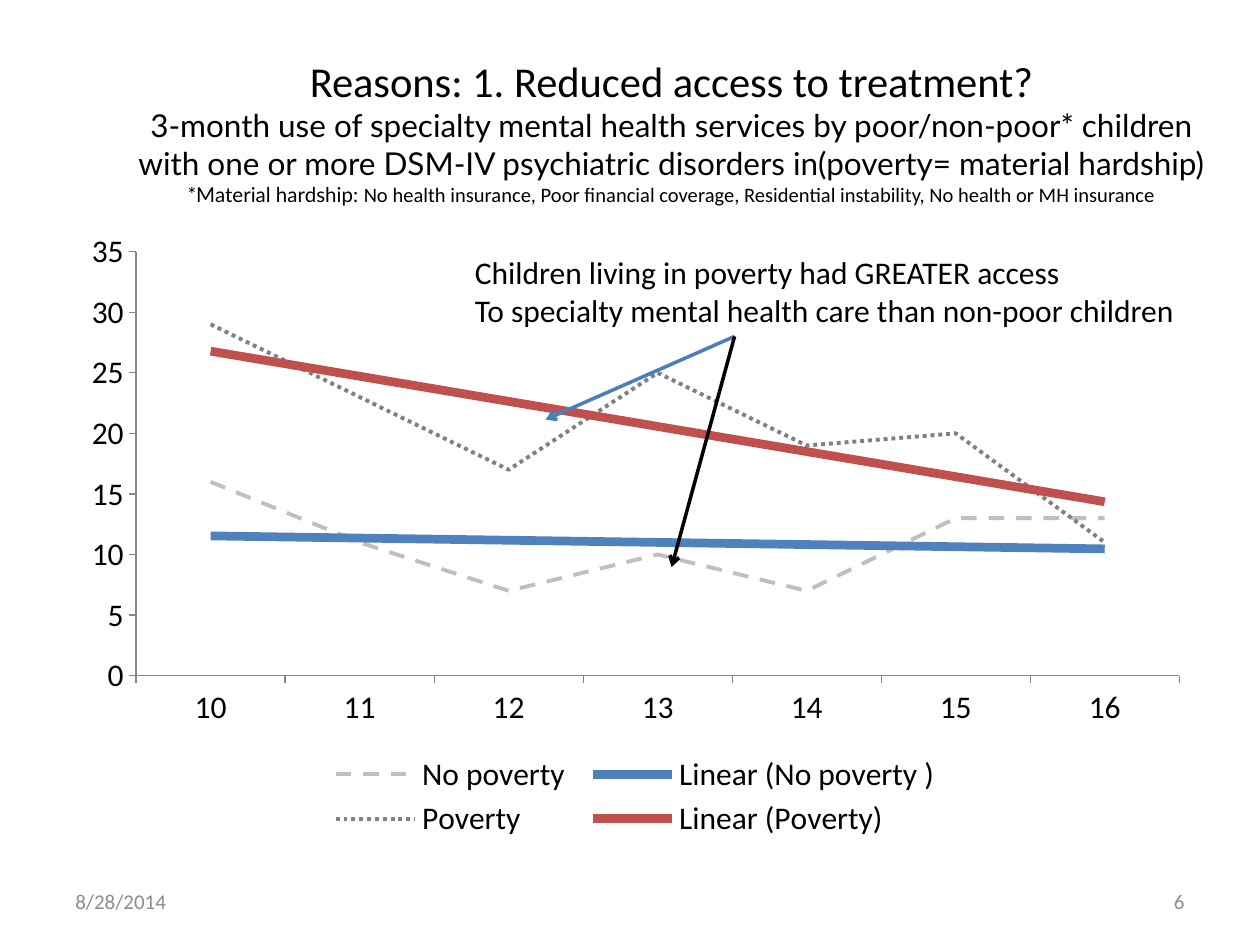
from dataclasses import dataclass

from lxml import etree
from pptx import Presentation
from pptx.chart.data import CategoryChartData
from pptx.dml.color import RGBColor
from pptx.enum.chart import XL_CHART_TYPE, XL_LEGEND_POSITION, XL_MARKER_STYLE, XL_TICK_MARK
from pptx.enum.dml import MSO_LINE
from pptx.enum.shapes import MSO_CONNECTOR
from pptx.enum.text import MSO_ANCHOR, PP_ALIGN
from pptx.oxml import parse_xml
from pptx.oxml.ns import nsdecls, qn
from pptx.util import Emu, Pt

PX = 9144  # 100 px to the inch
BLACK = RGBColor(0, 0, 0)
GREY = RGBColor(0x8C, 0x8C, 0x8C)
AXIS_GREY = RGBColor(0x86, 0x86, 0x86)
LIGHT_GREY = RGBColor(0xBF, 0xBF, 0xBF)
MID_GREY = RGBColor(0x80, 0x80, 0x80)
BLUE = RGBColor(0x4F, 0x81, 0xBD)
ARROW_BLUE = RGBColor(0x4B, 0x7E, 0xBC)
RED = RGBColor(0xC0, 0x50, 0x4D)
LEFT, CENTER, RIGHT = PP_ALIGN.LEFT, PP_ALIGN.CENTER, PP_ALIGN.RIGHT
TOP, MIDDLE = MSO_ANCHOR.TOP, MSO_ANCHOR.MIDDLE
DASH, DOT = MSO_LINE.DASH, MSO_LINE.ROUND_DOT


@dataclass
class Span:
    text: str
    size: float = 18
    font: str = "Calibri"
    color: RGBColor = BLACK


@dataclass
class TextBlock:
    place: tuple[int, int, int, int]
    paras: list[list[Span]]
    align: PP_ALIGN = LEFT
    anchor: MSO_ANCHOR = MIDDLE
    wrap: bool = True


@dataclass
class Arrow:
    start: tuple[int, int]
    end: tuple[int, int]
    color: RGBColor


@dataclass
class Trend:
    name: str
    values: tuple[int, ...]
    color: RGBColor
    dash: MSO_LINE
    trend_color: RGBColor


TITLE = [
    Span("Reasons: 1. Reduced access to treatment?\v", 24.3),
    Span("3-month use of specialty mental health services by poor/non-poor* children "
         "with one or more DSM-IV psychiatric disorders in(poverty= material hardship)\v",
         18, "Lato"),
    Span("*Material hardship: ", 11.7, "Lato"),
    Span("No health insurance, Poor financial coverage, Residential instability, "
         "No health or MH insurance", 11.7),
]
TEXTS = [
    TextBlock((83, 33, 900, 142), [TITLE], CENTER),
    TextBlock((50, 695, 233, 40), [[Span("8/28/2014", 12, color=GREY)]]),
    TextBlock((717, 695, 233, 40), [[Span("6", 12, color=GREY)]], RIGHT),
    TextBlock((367, 196, 588, 71),
              [[Span("Children living in poverty had GREATER access")],
               [Span("To specialty mental health care than non-poor children")]],
              anchor=TOP, wrap=False),
]
ARROWS = [
    Arrow((583, 267), (433, 333), ARROW_BLUE),
    Arrow((583, 267), (533, 450), BLACK),
]
AGES = [str(age) for age in range(10, 17)]
TRENDS = [
    Trend("No poverty ", (16, 11, 7, 10, 7, 13, 13), LIGHT_GREY, DASH, BLUE),
    Trend("Poverty", (29, 23, 17, 25, 19, 20, 11), MID_GREY, DOT, RED),
]
CHART_PLACE = (54, 175, 900, 495)
PLOT_LAYOUT = {"x": 0.06, "y": 0.05, "w": 0.92, "h": 0.68}


def emu(lengths: tuple[int, ...]) -> list[Emu]:
    return [Emu(length * PX) for length in lengths]


def set_format(target, values: dict) -> None:
    for name, value in values.items():
        setattr(target, name, value)


def add_text(page, block: TextBlock) -> None:
    box = page.shapes.add_textbox(*emu(block.place))
    frame = box.text_frame
    set_format(frame, {"word_wrap": block.wrap, "vertical_anchor": block.anchor})
    for index, spans in enumerate(block.paras):
        para = frame.add_paragraph() if index else frame.paragraphs[0]
        para.alignment = block.align
        for span in spans:
            run = para.add_run()
            run.text = span.text.rstrip("\v")
            set_format(run.font, {"size": Pt(span.size), "name": span.font})
            run.font.color.rgb = span.color
            if span.text.endswith("\v"):
                para.add_line_break()


def add_arrow(page, arrow: Arrow) -> None:
    line = page.shapes.add_connector(
        MSO_CONNECTOR.STRAIGHT, *emu(arrow.start), *emu(arrow.end))
    line.line.width = Pt(2)
    line.line.color.rgb = arrow.color
    etree.SubElement(line.line._get_or_add_ln(), qn("a:tailEnd"), type="arrow")
    etree.SubElement(line._element.spPr, qn("a:effectLst"))


def add_trendline(series, color: RGBColor) -> None:
    trendline = parse_xml(
        f'<c:trendline {nsdecls("c", "a")}><c:spPr><a:ln w="{Pt(5)}"><a:solidFill>'
        f'<a:srgbClr val="{color}"/></a:solidFill></a:ln></c:spPr>'
        '<c:trendlineType val="linear"/><c:dispRSqr val="0"/><c:dispEq val="0"/>'
        '</c:trendline>')
    series._element.find(qn("c:cat")).addprevious(trendline)


def set_plot_layout(chart) -> None:
    area = chart._chartSpace.chart.plotArea
    for old in area.findall(qn("c:layout")):
        area.remove(old)
    sizes = "".join(f'<c:{key} val="{value}"/>' for key, value in PLOT_LAYOUT.items())
    area.insert(0, parse_xml(
        f'<c:layout {nsdecls("c")}><c:manualLayout><c:layoutTarget val="inner"/>'
        f'<c:xMode val="edge"/><c:yMode val="edge"/>{sizes}</c:manualLayout></c:layout>'))


def add_service_chart(page) -> None:
    data = CategoryChartData()
    data.categories = AGES
    for trend in TRENDS:
        data.add_series(trend.name, trend.values)
    chart = page.shapes.add_chart(XL_CHART_TYPE.LINE, *emu(CHART_PLACE), data).chart
    set_format(chart, {"has_title": False, "has_legend": True})
    set_format(chart.font, {"size": Pt(18), "name": "Calibri"})
    chart.font.color.rgb = BLACK
    set_format(chart.legend, {"position": XL_LEGEND_POSITION.BOTTOM,
                              "include_in_layout": False})
    set_plot_layout(chart)

    # Axes
    set_format(chart.value_axis, {"minimum_scale": 0, "maximum_scale": 35, "major_unit": 5})
    for axis in (chart.category_axis, chart.value_axis):
        set_format(axis, {"has_major_gridlines": False,
                          "major_tick_mark": XL_TICK_MARK.OUTSIDE,
                          "minor_tick_mark": XL_TICK_MARK.NONE})
        axis.format.line.width = Pt(0.75)
        axis.format.line.color.rgb = AXIS_GREY

    # Series and their linear trends
    plot = chart.plots[0]
    plot.vary_by_categories = False
    for series, trend in zip(plot.series, TRENDS):
        series.smooth = False
        series.marker.style = XL_MARKER_STYLE.NONE
        series.format.line.color.rgb = trend.color
        set_format(series.format.line, {"width": Pt(2.25), "dash_style": trend.dash})
        add_trendline(series, trend.trend_color)


def main() -> None:
    deck = Presentation()
    deck.slide_width, deck.slide_height = emu((1000, 750))
    page = deck.slides.add_slide(deck.slide_layouts[6])
    add_service_chart(page)
    for block in TEXTS:
        add_text(page, block)
    for arrow in ARROWS:
        add_arrow(page, arrow)
    deck.save("out.pptx")


if __name__ == "__main__":
    main()
